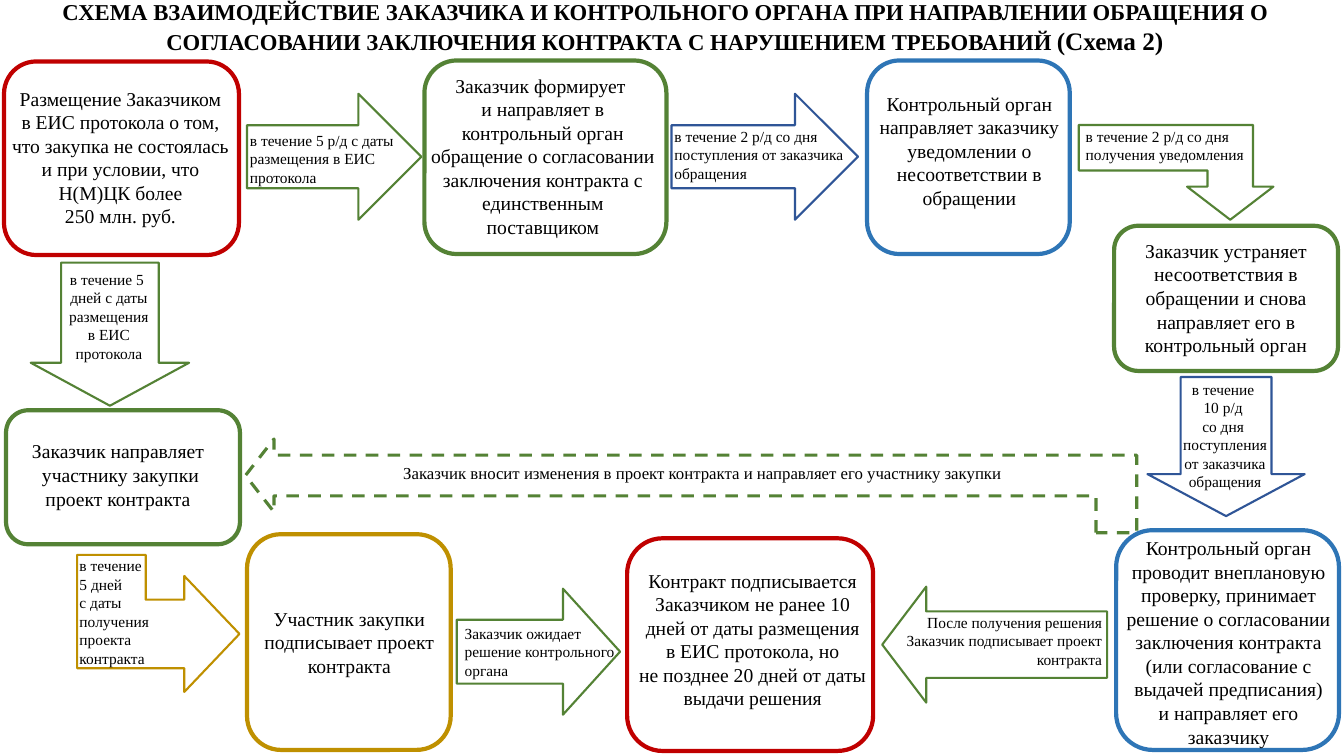
from pptx import Presentation
from pptx.dml.color import RGBColor
from pptx.enum.dml import MSO_LINE
from pptx.enum.shapes import MSO_SHAPE
from pptx.enum.text import MSO_ANCHOR, PP_ALIGN
from pptx.util import Pt

PX = 9144  # one px is a hundredth of an inch
FONT = "Times New Roman"
COLORS = {"text": "000000", "red": "C00000", "green": "548235",
          "blue": "2E75B6", "navy": "2F5597", "gold": "BF9000"}
LEFT, CENTER, RIGHT = PP_ALIGN.LEFT, PP_ALIGN.CENTER, PP_ALIGN.RIGHT
TOP, BOTTOM = MSO_ANCHOR.TOP, MSO_ANCHOR.BOTTOM
ROUNDED = MSO_SHAPE.ROUNDED_RECTANGLE
ARROW, BENT = MSO_SHAPE.RIGHT_ARROW, MSO_SHAPE.BENT_UP_ARROW
DASH = MSO_LINE.DASH
STEP_SIZE, TERM_SIZE = 14, 11


class Scheme:
    """Holds the style and the current slide."""

    def __init__(self, deck):
        self.page = deck.slides.add_slide(deck.slide_layouts[6])

    def outline(self, kind, at, color, weight):
        shape = self.page.shapes.add_shape(kind, *(v * PX for v in at))
        shape.shadow.inherit = False
        shape.fill.background()
        shape.line.color.rgb = RGBColor.from_string(COLORS[color])
        shape.line.width = Pt(weight)
        return shape

    def frame(self, at, color):
        self.outline(ROUNDED, at, color, 3)

    def arrow(self, kind, at, color, turn=0, adjust=(), flip=False,
              weight=1.5, dash=None):
        shape = self.outline(kind, at, color, weight)
        shape.rotation = turn
        for index, value in enumerate(adjust):
            shape.adjustments[index] = value
        if flip:
            shape._element.spPr.find(
                "{http://schemas.openxmlformats.org/drawingml/2006/main}xfrm"
            ).set("flipH", "1")
        if dash:
            shape.line.dash_style = dash

    def text(self, at, paragraphs, align=CENTER, anchor=TOP):
        """Each paragraph is a list of (words, size, bold) runs."""
        box = self.page.shapes.add_textbox(*(v * PX for v in at))
        box.text_frame.word_wrap = True
        box.text_frame.vertical_anchor = anchor
        for index, runs in enumerate(paragraphs):
            para = (box.text_frame.add_paragraph() if index
                    else box.text_frame.paragraphs[0])
            para.alignment = align
            for words, size, bold in runs:
                span = para.add_run()
                span.text = words
                span.font.name = FONT
                span.font.size = Pt(size)
                span.font.bold = bold
                span.font.color.rgb = RGBColor.from_string(COLORS["text"])

    def label(self, at, lines, size, align=CENTER):
        self.text(at, [[(line, size, False)] for line in lines], align)


# Steps: frame, colour, text box, lines
STEPS = [
    ((4, 61, 233, 192), "red", (0, 81, 244, 151),
     ["Размещение Заказчиком ", "в ЕИС протокола о том, ",
      "что закупка не состоялась ", "и при условии, что ",
      "Н(М)ЦК более ", "250 млн. руб. "]),
    ((421, 60, 240, 192), "green", (412, 68, 253, 175),
     ["Заказчик формирует ",
      "и направляет в контрольный орган обращение о согласовании "
      "заключения контракта с единственным поставщиком"]),
    ((860, 60, 201, 192), "blue", (849, 86, 225, 128),
     ["Контрольный орган направляет заказчику уведомлении о "
      "несоответствии в обращении"]),
    ((1105, 224, 222, 144), "green", (1101, 232, 230, 128),
     ["Заказчик устраняет несоответствия в обращении и снова "
      "направляет его в контрольный орган"]),
    ((1107, 526, 221, 218), "blue", (1104, 527, 229, 222),
     ["Контрольный орган проводит внеплановую проверку, принимает "
      "решение о согласовании заключения контракта (или согласование "
      "с выдачей предписания)", "и направляет его заказчику"]),
    ((622, 534, 244, 211), "red", (624, 559, 245, 151),
     ["Контракт подписывается Заказчиком не ранее 10 дней от даты "
      "размещения в ЕИС протокола, но",
      "не позднее 20 дней от даты выдачи решения"]),
    ((245, 530, 202, 214), "gold", (249, 597, 195, 81),
     ["Участник закупки подписывает проект контракта"]),
    ((6, 407, 232, 133), "green", (-11, 431, 261, 81),
     ["Заказчик направляет ", "участнику закупки", "проект контракта "]),
]

# Arrows: kind, frame, colour, turn, adjustments, mirrored
ARROWS = [
    (ARROW, (245, 93, 173, 125), "green"),
    (ARROW, (666, 93, 185, 125), "navy"),
    (BENT, (1070, 124, 193, 94), "green", 180, (0.48, 0.455, 0.349), True),
    (ARROW, (1147, 365, 138, 156), "navy", 90, (0.578, 0.302)),
    (ARROW, (875, 582, 223, 115), "green", 180, (0.573, 0.379)),
    (ARROW, (453, 584, 162, 125), "green", 0, (0.507, 0.453)),
    (BENT, (89, 538, 136, 161), "gold", 90, (0.5, 0.423, 0.403)),
    (ARROW, (38, 253, 142, 157), "green", 90, (0.616, 0.3)),
]

# Time limits on the arrows: text box, alignment, lines
TERMS = [
    ((238, 125, 168, 66), LEFT,
     ["в течение 5 р/д с даты размещения в ЕИС протокола"]),
    ((659, 121, 195, 66), LEFT,
     ["в течение 2 р/д со дня", "поступления от заказчика", "обращения"]),
    ((1067, 121, 199, 47), LEFT,
     ["в течение 2 р/д со дня", "получения уведомления"]),
    ((1159, 372, 112, 121), CENTER,
     ["в течение ", "10 р/д ", "со дня ", "поступления от заказчика",
      "обращения"]),
    ((873, 603, 230, 66), RIGHT,
     ["После получения решения Заказчик подписывает проект контракта"]),
    ((451, 614, 185, 66), LEFT,
     ["Заказчик ожидает", "решение контрольного", "органа"]),
    ((69, 547, 96, 121), LEFT,
     ["в течение", "5 дней", "с даты получения проекта контракта"]),
    ((54, 263, 108, 103), CENTER,
     ["в течение 5 ", "дней с даты размещения в ЕИС протокола"]),
]


def main():
    deck = Presentation()
    deck.slide_width, deck.slide_height = 1333 * PX, 750 * PX
    scheme = Scheme(deck)

    # Title
    scheme.text((-7, 6, 1333, 54), [[
        ("СХЕМА ВЗАИМОДЕЙСТВИЕ ЗАКАЗЧИКА И КОНТРОЛЬНОГО ОРГАНА ПРИ "
         "НАПРАВЛЕНИИ ОБРАЩЕНИЯ О СОГЛАСОВАНИИ ЗАКЛЮЧЕНИЯ КОНТРАКТА "
         "С НАРУШЕНИЕМ ТРЕБОВАНИЙ ", 16.2, True),
        ("(Схема 2)", 18, True)]], anchor=BOTTOM)

    # Steps of the procedure
    for frame_at, color, text_at, lines in STEPS:
        scheme.frame(frame_at, color)
        scheme.label(text_at, lines, STEP_SIZE)

    # Arrows and their time limits
    for arrow in ARROWS:
        scheme.arrow(*arrow)
    for text_at, align, lines in TERMS:
        scheme.label(text_at, lines, TERM_SIZE, align)

    # Dashed way back to the draft contract
    scheme.arrow(BENT, (639, 40, 93, 884), "green", 270,
                 (0.434, 0.389, 0.304), weight=2.25, dash=DASH)
    scheme.label((338, 454, 666, 30),
                 ["Заказчик вносит изменения в проект контракта и "
                  "направляет его участнику закупки"], 12, RIGHT)

    deck.save("out.pptx")


if __name__ == "__main__":
    main()
